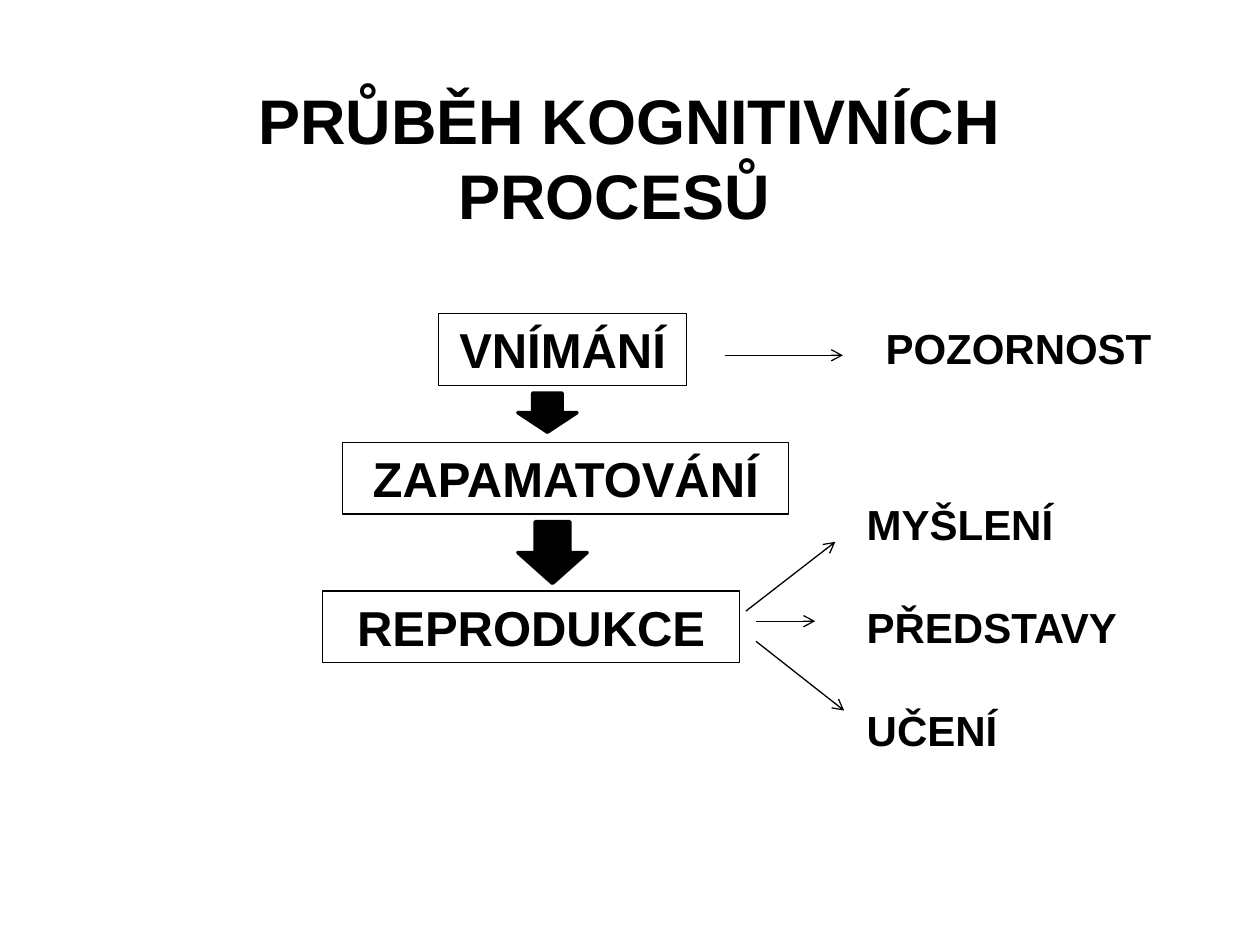
"""Build the slide on the course of cognitive processes."""
from lxml import etree
from pptx import Presentation
from pptx.dml.color import RGBColor
from pptx.enum.shapes import MSO_CONNECTOR, MSO_SHAPE
from pptx.enum.text import MSO_ANCHOR, MSO_AUTO_SIZE, PP_ALIGN
from pptx.oxml.ns import qn
from pptx.util import Inches, Pt

BLACK = RGBColor(0, 0, 0)
RECTANGLE, DOWN_ARROW = MSO_SHAPE.RECTANGLE, MSO_SHAPE.DOWN_ARROW
STRAIGHT = MSO_CONNECTOR.STRAIGHT
CENTER, LEFT = PP_ALIGN.CENTER, PP_ALIGN.LEFT
MIDDLE, TOP = MSO_ANCHOR.MIDDLE, MSO_ANCHOR.TOP
NO_AUTOFIT = MSO_AUTO_SIZE.NONE

presentation = Presentation()
presentation.slide_width, presentation.slide_height = Inches(10), Inches(7.5)
COLUMN = presentation.slide_width / 100
ROW = presentation.slide_height / 75
slide = presentation.slides.add_slide(presentation.slide_layouts[5])


def place(left, top, width, height):
    return [round(n * unit) for n, unit in
            zip((left, top, width, height), (COLUMN, ROW, COLUMN, ROW))]


def write(frame, lines, size, alignment, anchor=TOP, gap=0):
    frame.word_wrap = True
    frame.auto_size = NO_AUTOFIT
    frame.vertical_anchor = anchor
    frame.text = "\n".join(lines)
    for number, paragraph in enumerate(frame.paragraphs):
        paragraph.alignment = alignment
        paragraph.space_before = Pt(gap if number else 0)
        paragraph.font.name = "Arial"
        paragraph.font.size = Pt(size)
        paragraph.font.bold = True
        paragraph.font.color.rgb = BLACK


heading = slide.shapes.title
heading.left, heading.top, heading.width, heading.height = place(7.5, 6.2, 82.5, 12.5)
write(heading.text_frame, ["PRŮBĚH KOGNITIVNÍCH PROCESŮ"], 36, CENTER, MIDDLE)
heading_format = heading.text_frame.paragraphs[0]._p.get_or_add_pPr()
heading_format.set("marL", "0")
heading_format.set("indent", str(round(2.4 * COLUMN)))

for stage, left, top, width in [
    ("VNÍMÁNÍ", 34.8, 24.9, 19.7),
    ("ZAPAMATOVÁNÍ", 27.2, 35.1, 35.4),
    ("REPRODUKCE", 25.6, 46.9, 33.1),
]:
    box = slide.shapes.add_shape(RECTANGLE, *place(left, top, width, 5.7))
    box.shadow.inherit = False
    box.fill.background()
    box.line.color.rgb = BLACK
    box.line.width = Pt(0.75)
    write(box.text_frame, [stage], 28, CENTER)

for top, width, height in [(31.2, 4.7, 3.1), (41.4, 5.5, 4.9)]:
    step = slide.shapes.add_shape(DOWN_ARROW, *place(41.1, top, width, height))
    step.shadow.inherit = False
    step.fill.solid()
    step.fill.fore_color.rgb = BLACK
    step.line.color.rgb = BLACK
    step.line.width = Pt(2)

for start_x, start_y, end_x, end_y in [
    (57.5, 28.2, 66.9, 28.2),
    (59.2, 48.5, 66.3, 43),
    (60, 49.3, 64.7, 49.3),
    (60, 50.9, 67, 56.4),
]:
    link = slide.shapes.add_connector(STRAIGHT, *place(start_x, start_y, end_x, end_y))
    link.line.color.rgb = BLACK
    link.line.width = Pt(0.75)
    etree.SubElement(link.line._get_or_add_ln(), qn("a:tailEnd"), type="arrow")
    etree.SubElement(link._element.spPr, qn("a:effectLst"))

for processes, area in [
    (["POZORNOST"], (69.3, 25.1, 24, 5)),
    (["MYŠLENÍ", "PŘEDSTAVY", "UČENÍ"], (67.8, 39.1, 23.1, 21.2)),
]:
    label = slide.shapes.add_textbox(*place(*area))
    write(label.text_frame, processes, 24, LEFT, gap=30)

presentation.save("out.pptx")
